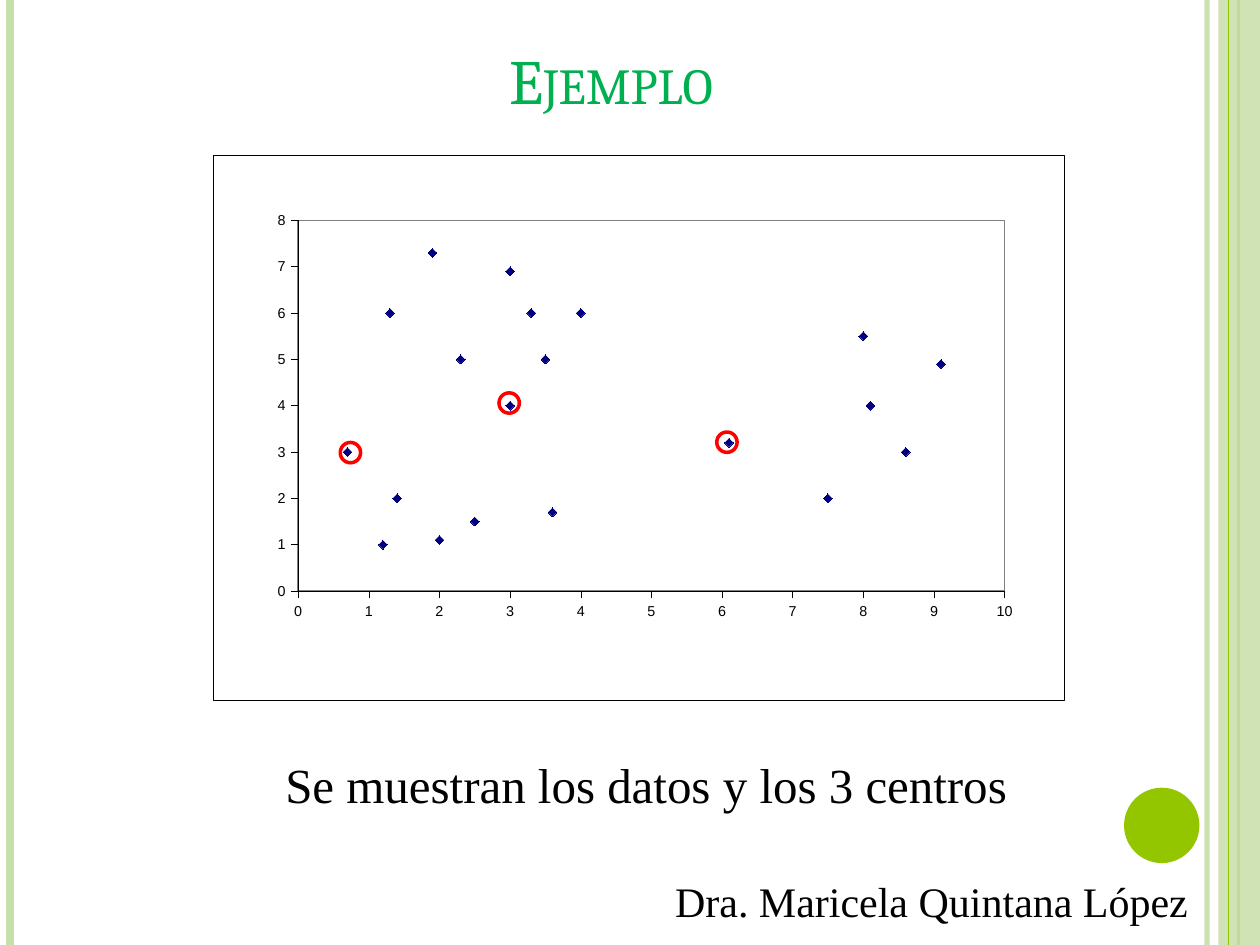
from dataclasses import dataclass

from lxml.etree import SubElement
from pptx import Presentation
from pptx.chart.data import XyChartData
from pptx.dml.color import RGBColor as Rgb
from pptx.enum.chart import XL_CHART_TYPE as ChartType, XL_MARKER_STYLE as Marker, XL_TICK_MARK as Tick
from pptx.enum.shapes import MSO_CONNECTOR as Connector, MSO_SHAPE as Preset
from pptx.enum.text import MSO_ANCHOR as Anchor, MSO_AUTO_SIZE as AutoSize, PP_ALIGN as Align
from pptx.oxml import parse_xml
from pptx.oxml.ns import nsdecls, qn
from pptx.util import Cm, Pt

COLORS = {
    "pale": "C8DFAB", "green": "94C600", "title": "00B050", "black": "000000",
    "white": "FFFFFF", "gray": "808080", "navy": "000080", "red": "FF0000",
}
WIDTH, HEIGHT = 25.4, 19.05
SERIF = "Times New Roman"


@dataclass
class Stripe:
    """A full-height vertical line."""
    x: float
    color: str
    weight: float
    opacity: int = 100


@dataclass
class Box:
    """A frame in centimetres."""
    left: float
    top: float
    width: float
    height: float

    def lengths(self) -> tuple:
        """Return the frame as slide lengths."""
        return Cm(self.left), Cm(self.top), Cm(self.width), Cm(self.height)


STRIPES = [
    Stripe(24.33, "pale", 3, 93),
    Stripe(0.2, "pale", 4.5),
    Stripe(24.97, "green", 1.5),
]
FRONT_STRIPE = Stripe(24.77, "green", 0.75)
CENTER_SIZE = 0.41
CENTERS = [(6.86, 8.92), (10.06, 7.92), (14.45, 8.71)]
POINTS = [
    (1.2, 1), (1.4, 2), (2, 1.1), (2.5, 1.5), (3.6, 1.7), (0.7, 3), (1.3, 6),
    (1.9, 7.3), (3, 6.9), (3.3, 6), (4, 6), (2.3, 5), (3.5, 5), (3, 4),
    (6.1, 3.2), (8, 5.5), (9.1, 4.9), (8.1, 4), (8.6, 3), (7.5, 2),
]


def color(name: str) -> Rgb:
    """Look up a named colour."""
    return Rgb.from_string(COLORS[name])


def set_opacity(element, percent: int) -> None:
    """Make the first solid colour of an element translucent."""
    if percent < 100:
        rgb = next(element.iter(qn("a:srgbClr")))
        SubElement(rgb, qn("a:alpha")).set("val", str(percent * 1000))


def add_stripe(slide, stripe: Stripe) -> None:
    """Draw a vertical stripe."""
    x = Cm(stripe.x)
    line = slide.shapes.add_connector(Connector.STRAIGHT, x, 0, x, Cm(HEIGHT))
    line.line.color.rgb = color(stripe.color)
    line.line.width = Pt(stripe.weight)
    set_opacity(line.element, stripe.opacity)
    SubElement(line.element.spPr, qn("a:effectLst"))


def add_shape(slide, preset, box: Box, fill: str = "", outline: str = "", opacity: int = 100) -> None:
    """Draw a filled or outlined preset shape."""
    shape = slide.shapes.add_shape(preset, *box.lengths())
    shape.shadow.inherit = False
    if fill:
        shape.fill.solid()
        shape.fill.fore_color.rgb = color(fill)
        set_opacity(shape.element, opacity)
    else:
        shape.fill.background()
    if outline:
        shape.line.color.rgb = color(outline)
        shape.line.width = Pt(2)
    else:
        shape.line.fill.background()


def add_run(paragraph, text: str, size: float, font: str, tint: str):
    """Append a formatted run."""
    run = paragraph.add_run()
    run.text = text
    run.font.size, run.font.name = Pt(size), font
    run.font.color.rgb = color(tint)
    return run


def add_text(slide, box: Box, text: str, size: float, align, wrap: bool) -> None:
    """Add a one-paragraph text box."""
    frame = slide.shapes.add_textbox(*box.lengths()).text_frame
    frame.word_wrap = wrap
    frame.auto_size = AutoSize.SHAPE_TO_FIT_TEXT
    paragraph = frame.paragraphs[0]
    paragraph.alignment = align
    add_run(paragraph, text, size, SERIF, "black")


def format_title(slide) -> None:
    """Place and fill the title."""
    title = slide.shapes.title
    title.left, title.top, title.width, title.height = Box(0.89, 0.53, 22.86, 1.96).lengths()
    title.text_frame.vertical_anchor = Anchor.BOTTOM
    paragraph = title.text_frame.paragraphs[0]
    paragraph.alignment = Align.CENTER
    run = add_run(paragraph, "Ejemplo", 36, "Cambria", "title")
    run.font._element.set("cap", "small")


def area_format(border: str, weight: float):
    """Build a white chart area with a border."""
    return parse_xml(
        f'<c:spPr {nsdecls("c", "a")}><a:solidFill><a:srgbClr val="{COLORS["white"]}"/></a:solidFill>'
        f'<a:ln w="{Pt(weight)}"><a:solidFill><a:srgbClr val="{COLORS[border]}"/></a:solidFill></a:ln></c:spPr>'
    )


def plot_layout(x: float, y: float, width: float, height: float):
    """Build a fixed inner plot layout."""
    values = {"x": x, "y": y, "w": width, "h": height}
    sizes = "".join(f'<c:{key} val="{value}"/>' for key, value in values.items())
    return parse_xml(
        f'<c:layout {nsdecls("c")}><c:manualLayout><c:layoutTarget val="inner"/>'
        f'<c:xMode val="edge"/><c:yMode val="edge"/>{sizes}</c:manualLayout></c:layout>'
    )


def format_axis(axis, maximum: int) -> None:
    """Set the scale and look of an axis."""
    axis.minimum_scale, axis.maximum_scale, axis.major_unit = 0, maximum, 1
    axis.has_major_gridlines = False
    axis.major_tick_mark, axis.minor_tick_mark = Tick.OUTSIDE, Tick.NONE
    axis.format.line.color.rgb = color("black")
    axis.format.line.width = Pt(0.25)
    axis.tick_labels.number_format = "General"
    axis.tick_labels.number_format_is_linked = False


def add_scatter(slide, box: Box) -> None:
    """Add the scatter chart of the data."""
    data = XyChartData()
    series_data = data.add_series("Series 1")
    for x, y in POINTS:
        series_data.add_data_point(x, y)
    chart = slide.shapes.add_chart(ChartType.XY_SCATTER, *box.lengths(), data).chart
    chart.has_title = chart.has_legend = False
    chart.font.size, chart.font.name = Pt(8.2), "Arial"
    chart.font.color.rgb = color("black")
    format_axis(chart.category_axis, 10)
    format_axis(chart.value_axis, 8)
    plot = chart.plots[0]
    plot.vary_by_categories = False
    series = plot.series[0]
    series.smooth = False
    series.format.line.fill.background()
    series.marker.style, series.marker.size = Marker.DIAMOND, 5
    series.marker.format.fill.solid()
    series.marker.format.fill.fore_color.rgb = color("navy")
    series.marker.format.line.color.rgb = color("navy")
    space = chart._chartSpace
    area = space.find(".//" + qn("c:plotArea"))
    for layout in area.findall(qn("c:layout")):
        area.remove(layout)
    area.insert(0, plot_layout(0.1, 0.12, 0.83, 0.68))
    area.append(area_format("gray", 1))
    space.find(qn("c:txPr")).addprevious(area_format("black", 0.25))


def main() -> None:
    """Build and save the slide."""
    presentation = Presentation()
    presentation.slide_width, presentation.slide_height = Cm(WIDTH), Cm(HEIGHT)
    slide = presentation.slides.add_slide(presentation.slide_layouts[5])
    for stripe in STRIPES:
        add_stripe(slide, stripe)
    add_shape(slide, Preset.RECTANGLE, Box(24.56, 0, 0.84, HEIGHT), "pale", opacity=87)
    add_stripe(slide, FRONT_STRIPE)
    add_shape(slide, Preset.OVAL, Box(22.66, 15.88, 1.52, 1.52), "green")
    add_text(slide, Box(13.36, 17.53, 10.95, 1.27), "Dra. Maricela Quintana López", 24, Align.LEFT, False)
    format_title(slide)
    add_scatter(slide, Box(4.29, 3.12, 17.17, 11))
    add_text(slide, Box(1.91, 15.09, 22.23, 1.45), "Se muestran los datos y los 3 centros", 28, Align.CENTER, True)
    for left, top in CENTERS:
        add_shape(slide, Preset.OVAL, Box(left, top, CENTER_SIZE, CENTER_SIZE), outline="red")
    presentation.save("out.pptx")


if __name__ == "__main__":
    main()
